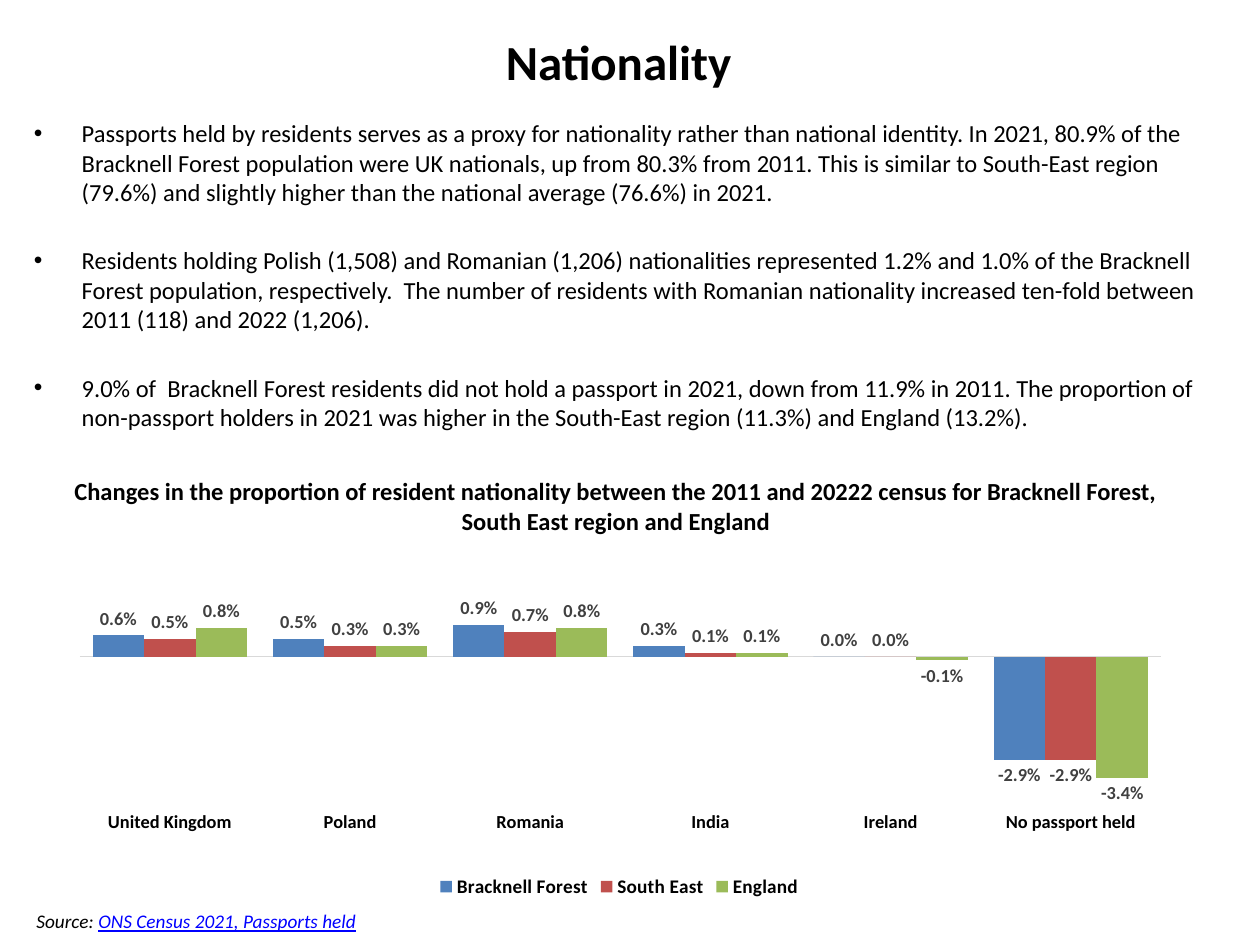
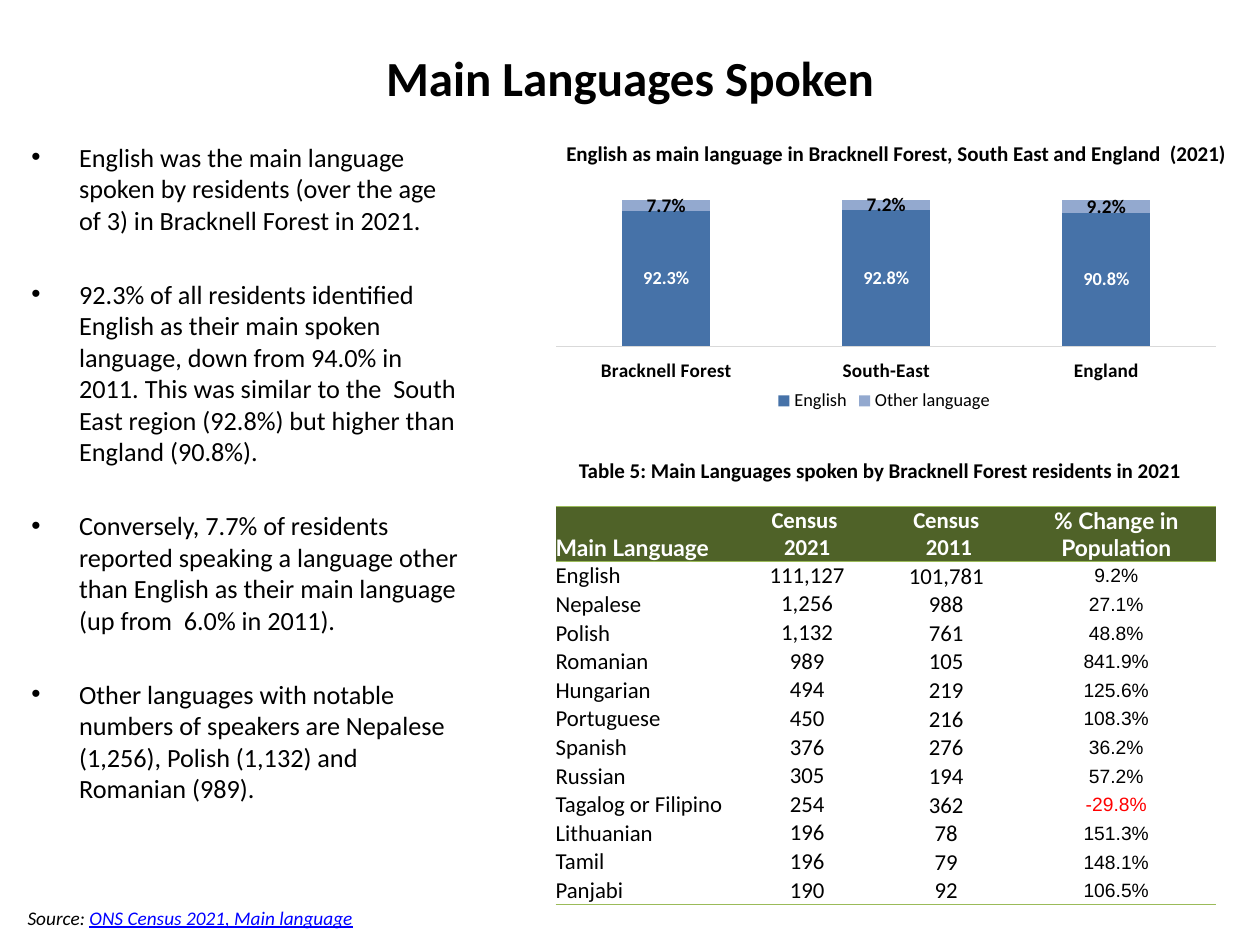
import pptx
import pptx.chart.data
import pptx.dml.color
import pptx.enum.chart
import pptx.enum.text
import pptx.oxml
import pptx.oxml.ns
import pptx.util

Inches = pptx.util.Inches
Pt = pptx.util.Pt
RGBColor = pptx.dml.color.RGBColor
ALIGN = pptx.enum.text.PP_ALIGN
ANCHOR = pptx.enum.text.MSO_ANCHOR
CHART = pptx.enum.chart.XL_CHART_TYPE
LABEL = pptx.enum.chart.XL_LABEL_POSITION

BLACK = RGBColor(0x00, 0x00, 0x00)
WHITE = RGBColor(0xFF, 0xFF, 0xFF)
RED = RGBColor(0xFF, 0x00, 0x00)
LINK = RGBColor(0x00, 0x00, 0xFF)
LABEL_GREY = RGBColor(0x40, 0x40, 0x40)
AXIS_GREY = RGBColor(0xD9, 0xD9, 0xD9)
BLUE = RGBColor(0x4F, 0x81, 0xBD)
BRICK = RGBColor(0xC0, 0x50, 0x4D)
GREEN = RGBColor(0x9B, 0xBB, 0x59)
DARK_GREEN = RGBColor(0x4F, 0x62, 0x28)
STEEL = RGBColor(0x46, 0x72, 0xA8)
PALE_BLUE = RGBColor(0x93, 0xA9, 0xCF)
FONT = "Calibri"
NO_STYLE = "{2D5ABB26-0587-4C30-8999-92F81FD0307C}"

PAGES = [
    {
        "title": ("Nationality", (0.41, 0.15, 9, 0.67)),
        "bullets": {
            "box": (0.17, 0.89, 9.48, 2.71), "size": 14, "gap": 22.2,
            "items": [
                "Passports held by residents serves as a proxy for nationality rather than national identity. In 2021, 80.9% of the Bracknell Forest population were UK nationals, up from 80.3% from 2011. This is similar to South-East region (79.6%) and slightly higher than the national average (76.6%) in 2021.",
                "Residents holding Polish (1,508) and Romanian (1,206) nationalities represented 1.2% and 1.0% of the Bracknell Forest population, respectively.  The number of residents with Romanian nationality increased ten-fold between 2011 (118) and 2022 (1,206).",
                "9.0% of  Bracknell Forest residents did not hold a passport in 2021, down from 11.9% in 2011. The proportion of non-passport holders in 2021 was higher in the South-East region (11.3%) and England (13.2%).",
            ],
        },
        "captions": [
            ("Changes in the proportion of resident nationality between the 2011 and 20222 census for Bracknell Forest, \nSouth East region and England ",
             (0.05, 3.73, 9.72, 0.57), 14),
        ],
        "chart": {
            "type": CHART.COLUMN_CLUSTERED, "box": (0.59, 4.43, 8.65, 2.74),
            "plot": (0.005, 0.079, 0.992, 0.619), "scale": (-0.04, 0.02),
            "gap": 50, "overlap": 0, "cat_size": 10.5, "legend": (11, True),
            "label_pos": LABEL.OUTSIDE_END,
            "cats": ["United Kingdom", "Poland", "Romania", "India", "Ireland", "No passport held"],
            "series": [
                ("Bracknell Forest", [0.006, 0.005, 0.009, 0.003, 0, -0.029], BLUE, LABEL_GREY, 10.5),
                ("South East", [0.005, 0.003, 0.007, 0.001, 0, -0.029], BRICK, LABEL_GREY, 10.5),
                ("England", [0.008, 0.003, 0.008, 0.001, -0.001, -0.034], GREEN, LABEL_GREY, 10.5),
            ],
        },
        "source": ("ONS Census 2021, Passports held", (0.19, 7.17, 4.85, 0.29)),
    },
    {
        "title": ("Main Languages Spoken", (0.5, 0.3, 9, 0.62)),
        "bullets": {
            "box": (0.15, 1.07, 3.6, 5.72), "size": 15, "gap": 24.3,
            "items": [
                "English was the main language spoken by residents (over the age of 3) in Bracknell Forest in 2021.",
                "92.3% of all residents identified English as their main spoken language, down from 94.0% in 2011. This was similar to the  South East region (92.8%) but higher than England (90.8%).",
                "Conversely, 7.7% of residents reported speaking a language other than English as their main language (up from  6.0% in 2011).",
                "Other languages with notable numbers of speakers are Nepalese (1,256), Polish (1,132) and Romanian (989).",
            ],
        },
        "captions": [
            ("English as main language in Bracknell Forest, South East and England  (2021)",
             (4.37, 1.07, 5.49, 0.3), 12),
            ("Table 5: Main Languages spoken by Bracknell Forest residents in 2021",
             (4.41, 3.58, 5.15, 0.3), 12),
        ],
        "chart": {
            "type": CHART.COLUMN_STACKED_100, "box": (4.41, 1.35, 5.25, 1.96),
            "plot": (0, 0.002, 1, 0.712), "scale": (0, 1.2),
            "gap": 150, "overlap": 100, "cat_size": 11, "legend": (10.5, False),
            "label_pos": LABEL.CENTER,
            "cats": ["Bracknell Forest", "South-East", "England"],
            "series": [
                ("English", [0.923, 0.928, 0.908], STEEL, WHITE, 10.5),
                ("Other language ", [0.077, 0.072, 0.092], PALE_BLUE, BLACK, 11),
            ],
        },
        "table": {
            "box": (4.41, 4.02, 5.25, 2.95), "cols": (1.45, 1.09, 1.12, 1.58),
            "rows": [
                ("Main Language", "Census \n2021", "Census\n 2011", "% Change in Population"),
                ("English", "111,127", "101,781", "9.2%"),
                ("Nepalese", "1,256", "988", "27.1%"),
                ("Polish", "1,132", "761", "48.8%"),
                ("Romanian", "989", "105", "841.9%"),
                ("Hungarian", "494", "219", "125.6%"),
                ("Portuguese", "450", "216", "108.3%"),
                ("Spanish", "376", "276", "36.2%"),
                ("Russian", "305", "194", "57.2%"),
                ("Tagalog or Filipino", "254", "362", "-29.8%"),
                ("Lithuanian", "196", "78", "151.3%"),
                ("Tamil", "196", "79", "148.1%"),
                ("Panjabi", "190", "92", "106.5%"),
            ],
        },
        "source": ("ONS Census 2021, Main language", (0.12, 7.14, 4.85, 0.29)),
    },
]


def inches(box):
    return [Inches(v) for v in box]


def style(font, size, color=BLACK, bold=False, italic=False, name=FONT):
    font.name, font.size, font.bold, font.italic = name, Pt(size), bold, italic
    font.color.rgb = color


def add_text(p, text, *args, **kwargs):
    for i, line in enumerate(text.split("\n")):
        if i:
            p.add_line_break()
        r = p.add_run()
        r.text = line
        style(r.font, *args, **kwargs)
    return r


def add_box(s, box):
    tf = s.shapes.add_textbox(*inches(box)).text_frame
    tf.word_wrap = True
    return tf


def add_title(s, text, box):
    sp = s.shapes.title
    sp.left, sp.top, sp.width, sp.height = inches(box)
    tf = sp.text_frame
    tf.vertical_anchor = ANCHOR.MIDDLE
    p = tf.paragraphs[0]
    p.alignment = ALIGN.CENTER
    add_text(p, text, 28, bold=True)


def add_bullets(s, box, size, gap, items):
    tf = add_box(s, box)
    for i, item in enumerate(items):
        p = tf.add_paragraph() if i else tf.paragraphs[0]
        pPr = p._p.get_or_add_pPr()
        pPr.set("marL", str(Inches(0.38)))
        pPr.set("indent", str(-Inches(0.38)))
        pptx.oxml.ns.qn("a:buChar")
        pPr.append(xml("a", '<a:buFont {ns} typeface="Arial"/>'))
        pPr.append(xml("a", '<a:buChar {ns} char="•"/>'))
        if i:
            p.space_before = Pt(gap)
        add_text(p, item, size)


def xml(prefix, markup):
    return pptx.oxml.parse_xml(markup.format(ns=pptx.oxml.ns.nsdecls(prefix)))


def add_caption(s, text, box, size):
    p = add_box(s, box).paragraphs[0]
    p.alignment = ALIGN.CENTER
    add_text(p, text, size, bold=True)


def add_source(s, text, box):
    p = add_box(s, box).paragraphs[0]
    add_text(p, "Source: ", 11, italic=True)
    add_text(p, text, 11, LINK, italic=True).font.underline = True


def set_plot_layout(chart, plot):
    area = chart._chartSpace.chart.plotArea
    for old in area.findall(pptx.oxml.ns.qn("c:layout")):
        area.remove(old)
    parts = [("layoutTarget", "inner"), ("xMode", "edge"), ("yMode", "edge")]
    parts += zip("xywh", plot)
    inner = "".join(f'<c:{tag} val="{val}"/>' for tag, val in parts)
    area.insert(0, xml("c", "<c:layout {ns}><c:manualLayout>" + inner + "</c:manualLayout></c:layout>"))


def add_chart(s, spec):
    data = pptx.chart.data.CategoryChartData(number_format="0.0%")
    data.categories = spec["cats"]
    for name, values, *_ in spec["series"]:
        data.add_series(name, values)
    chart = s.shapes.add_chart(spec["type"], *inches(spec["box"]), data).chart
    style(chart.font, 10)
    chart.has_title = False
    chart.has_legend = True
    chart.legend.position = pptx.enum.chart.XL_LEGEND_POSITION.BOTTOM
    chart.legend.include_in_layout = False
    size, bold = spec["legend"]
    style(chart.legend.font, size, bold=bold)

    axis = chart.category_axis
    axis.major_tick_mark = pptx.enum.chart.XL_TICK_MARK.NONE
    axis.tick_label_position = pptx.enum.chart.XL_TICK_LABEL_POSITION.LOW
    axis.format.line.color.rgb = AXIS_GREY
    axis.format.line.width = Pt(0.75)
    style(axis.tick_labels.font, spec["cat_size"], bold=True)
    values = chart.value_axis
    values.minimum_scale, values.maximum_scale = spec["scale"]
    values.has_major_gridlines = False
    values.visible = False

    plot = chart.plots[0]
    plot.vary_by_categories = False
    plot.gap_width, plot.overlap = spec["gap"], spec["overlap"]
    for series, (_, _, fill, color, size) in zip(plot.series, spec["series"]):
        series.invert_if_negative = False
        series.format.fill.solid()
        series.format.fill.fore_color.rgb = fill
        labels = series.data_labels
        labels.show_value = True
        labels.number_format, labels.number_format_is_linked = "0.0%", False
        labels.position = spec["label_pos"]
        style(labels.font, size, color, bold=True)
    set_plot_layout(chart, spec["plot"])


def add_rule(cell, side):
    cell._tc.get_or_add_tcPr().insert(0, xml("a", (
        f'<a:{side} {{ns}} w="12700"><a:solidFill><a:srgbClr val="{GREEN}"/>'
        f'</a:solidFill></a:{side}>')))


def add_table(s, box, cols, rows):
    table = s.shapes.add_table(len(rows), len(cols), *inches(box)).table
    table._tbl.tblPr.find(pptx.oxml.ns.qn("a:tableStyleId")).text = NO_STYLE
    table.first_row = table.horz_banding = False
    for column, width in zip(table.columns, cols):
        column.width = Inches(width)
    for i, row in enumerate(rows):
        header = i == 0
        table.rows[i].height = Inches(0.43 if header else 0.21)
        for j, text in enumerate(row):
            cell = table.cell(i, j)
            inset = Inches(0.01 if j > 1 and not header else 0)
            cell.margin_left = cell.margin_right = cell.margin_top = inset
            cell.margin_bottom = 0
            low = j == 0 or (header and j == 3)
            cell.vertical_anchor = ANCHOR.BOTTOM if low else ANCHOR.MIDDLE
            p = cell.text_frame.paragraphs[0]
            p.alignment = ALIGN.CENTER if j else ALIGN.LEFT
            if header:
                cell.fill.solid()
                cell.fill.fore_color.rgb = DARK_GREEN
                add_text(p, text, 13, WHITE, bold=True, name="Lato" if low else FONT)
            else:
                cell.fill.background()
                change = j == 3
                add_text(p, text, 11 if change else 13, RED if text.startswith("-") else BLACK,
                         name="Arial" if change else FONT)
            if header or i == len(rows) - 1:
                add_rule(cell, "lnB")
            if header:
                add_rule(cell, "lnT")


def main():
    prs = pptx.Presentation()
    prs.slide_width, prs.slide_height = Inches(10), Inches(7.5)
    for page in PAGES:
        s = prs.slides.add_slide(prs.slide_layouts[5])
        add_title(s, *page["title"])
        add_bullets(s, **page["bullets"])
        for caption in page["captions"]:
            add_caption(s, *caption)
        add_chart(s, page["chart"])
        if "table" in page:
            add_table(s, **page["table"])
        add_source(s, *page["source"])
    prs.save("out.pptx")


if __name__ == "__main__":
    main()
